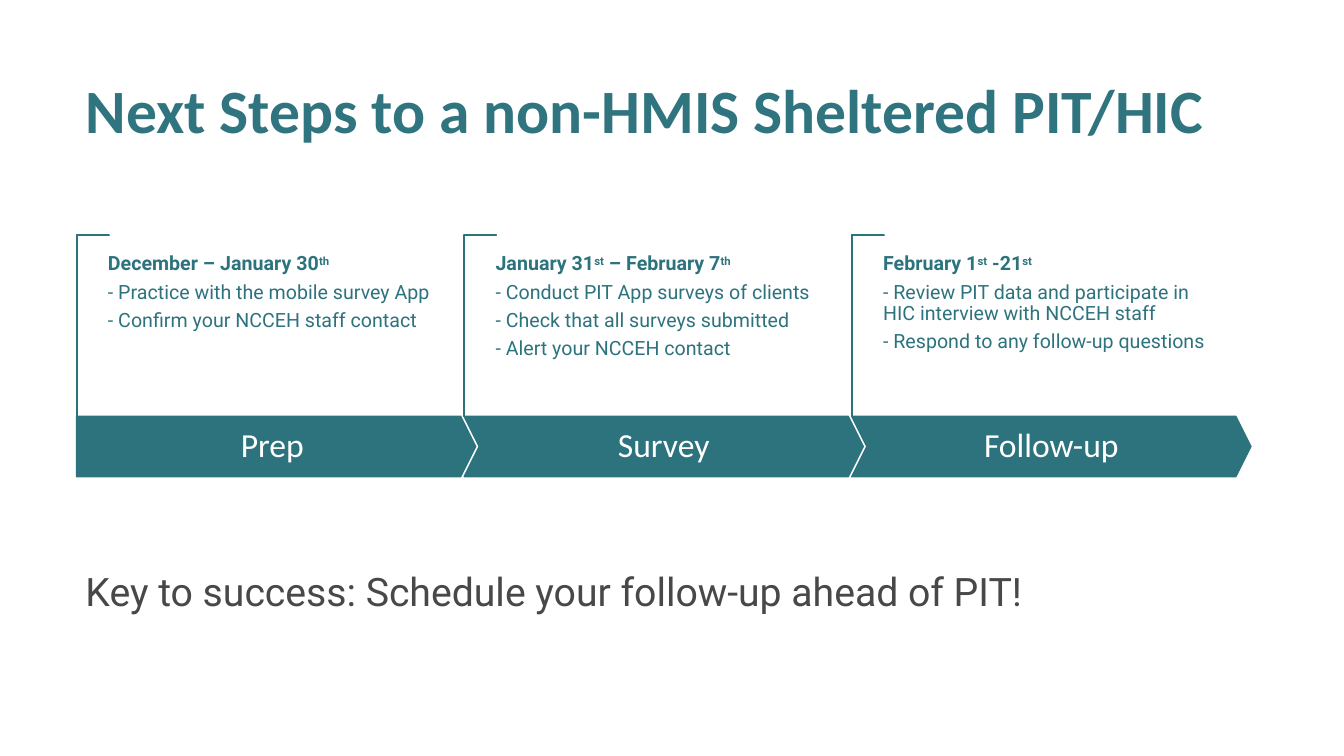
from dataclasses import dataclass

import pptx
import pptx.dml.color
import pptx.enum.shapes
import pptx.enum.text
import pptx.util

Pt = pptx.util.Pt
ShapeKind = pptx.enum.shapes.MSO_SHAPE
Align = pptx.enum.text.PP_ALIGN
Anchor = pptx.enum.text.MSO_ANCHOR

COLORS = {"teal": "2D737E", "title": "2F747E", "grey": "484848", "white": "FFFFFF"}

# Layout, in points
FIRST_LEFT, STEP_PITCH = 54.72, 276.85
ARROW_TOP, ARROW_WIDTH, ARROW_HEIGHT = 297.36, 285.12, 43.2
ARROW_POINT = 0.25
BRACKET_LENGTH, BRACKET_DEPTH, BRACKET_TOP = 129.6, 23.04, 168
TASKS_INDENT, TASKS_TOP, TASKS_WIDTH, TASKS_HEIGHT = 22.4, 181.44, 231.84, 75.6
TEXT_LEFT, TEXT_WIDTH = 54, 839.52


@dataclass(frozen=True)
class Step:
    name: str
    dates: str  # parts between carets are superscript
    tasks: tuple[str, ...]


STEPS = (
    Step("Prep", "December – January 30^th^",
         ("- Practice with the mobile survey App",
          "- Confirm your NCCEH staff contact")),
    Step("Survey", "January 31^st^ – February 7^th^",
         ("- Conduct PIT App surveys of clients",
          "- Check that all surveys submitted",
          "- Alert your NCCEH contact")),
    Step("Follow-up", "February 1^st^ -21^st^",
         ("- Review PIT data and participate in HIC interview with NCCEH staff",
          "- Respond to any follow-up questions")),
)


def rgb(name: str) -> pptx.dml.color.RGBColor:
    return pptx.dml.color.RGBColor.from_string(COLORS[name])


def write_text(frame, text: str, *, size: float, font: str, color: str,
               bold: bool = False, align=Align.LEFT, after: float = 0) -> None:
    """Add one paragraph, using the empty first one if there is one."""
    paragraph = frame.paragraphs[0]
    if paragraph.runs:
        paragraph = frame.add_paragraph()
    paragraph.alignment = align
    paragraph.line_spacing = 0.9
    paragraph.space_before = Pt(0)
    paragraph.space_after = Pt(after)
    for index, part in enumerate(text.split("^")):
        if not part:
            continue
        run = paragraph.add_run()
        run.text = part
        run.font.size = Pt(size)
        run.font.name = font
        run.font.bold = bold
        run.font.color.rgb = rgb(color)
        if index % 2:
            run._r.get_or_add_rPr().set("baseline", "30000")


def setup_frame(frame, *, anchor=Anchor.TOP, inset_x: float = 7.2, inset_y: float = 3.6):
    frame.word_wrap = True
    frame.auto_size = pptx.enum.text.MSO_AUTO_SIZE.NONE
    frame.vertical_anchor = anchor
    frame.margin_left = frame.margin_right = Pt(inset_x)
    frame.margin_top = frame.margin_bottom = Pt(inset_y)
    return frame


def add_frame(slide, left: float, top: float, width: float, height: float, **layout):
    box = slide.shapes.add_textbox(Pt(left), Pt(top), Pt(width), Pt(height))
    return setup_frame(box.text_frame, **layout)


def add_outline(slide, kind, left: float, top: float, width: float, height: float,
                *, fill: str, adjustments: tuple[float, ...]):
    outline = slide.shapes.add_shape(kind, Pt(left), Pt(top), Pt(width), Pt(height))
    outline.shadow.inherit = False
    outline.fill.solid()
    outline.fill.fore_color.rgb = rgb(fill)
    outline.line.color.rgb = rgb("teal")
    outline.line.width = Pt(1)
    for index, value in enumerate(adjustments):
        outline.adjustments[index] = value
    return outline


def add_step(slide, step: Step, index: int) -> None:
    left = FIRST_LEFT + index * STEP_PITCH
    first = index == 0

    # Bracket: a thin corner, turned so that it opens to the lower right
    bracket = add_outline(
        slide, ShapeKind.CORNER, left + (BRACKET_DEPTH - BRACKET_LENGTH) / 2,
        BRACKET_TOP + (BRACKET_LENGTH - BRACKET_DEPTH) / 2, BRACKET_LENGTH,
        BRACKET_DEPTH, fill="white", adjustments=(0.01, 0.01))
    bracket.rotation = 90

    # Arrow and its name
    add_outline(slide, ShapeKind.PENTAGON if first else ShapeKind.CHEVRON,
                left, ARROW_TOP, ARROW_WIDTH, ARROW_HEIGHT,
                fill="teal", adjustments=(ARROW_POINT,))
    point = ARROW_POINT * ARROW_HEIGHT
    name_left = left if first else left + point
    name_width = ARROW_WIDTH - (point / 2 if first else 2 * point)
    name = add_frame(slide, name_left, ARROW_TOP, name_width, ARROW_HEIGHT,
                     anchor=Anchor.MIDDLE, inset_x=12)
    write_text(name, step.name, size=24, font="Calibri", color="white",
               align=Align.CENTER)

    # Dates and tasks
    tasks = add_frame(slide, left + TASKS_INDENT, TASKS_TOP, TASKS_WIDTH,
                      TASKS_HEIGHT, inset_x=0, inset_y=0)
    for row, line in enumerate((step.dates, *step.tasks)):
        write_text(tasks, line, size=14, font="Roboto", color="teal",
                   bold=row == 0, after=4.9)


def main() -> None:
    deck = pptx.Presentation()
    deck.slide_width, deck.slide_height = Pt(960), Pt(540)
    slide = deck.slides.add_slide(deck.slide_layouts[5])

    # Title
    title = slide.shapes.title
    title.left, title.top = Pt(TEXT_LEFT), Pt(28.8)
    title.width, title.height = Pt(TEXT_WIDTH), Pt(104.4)
    write_text(setup_frame(title.text_frame, anchor=Anchor.MIDDLE),
               "Next Steps to a non-HMIS Sheltered PIT/HIC",
               size=44, font="Calibri", color="title", bold=True)

    # Timeline
    for index, step in enumerate(STEPS):
        add_step(slide, step, index)

    # Closing advice
    advice = add_frame(slide, TEXT_LEFT, 405.36, TEXT_WIDTH, 80.64)
    write_text(advice, "Key to success: Schedule your follow-up ahead of PIT!",
               size=28, font="Roboto", color="grey")

    deck.save("out.pptx")


if __name__ == "__main__":
    main()
